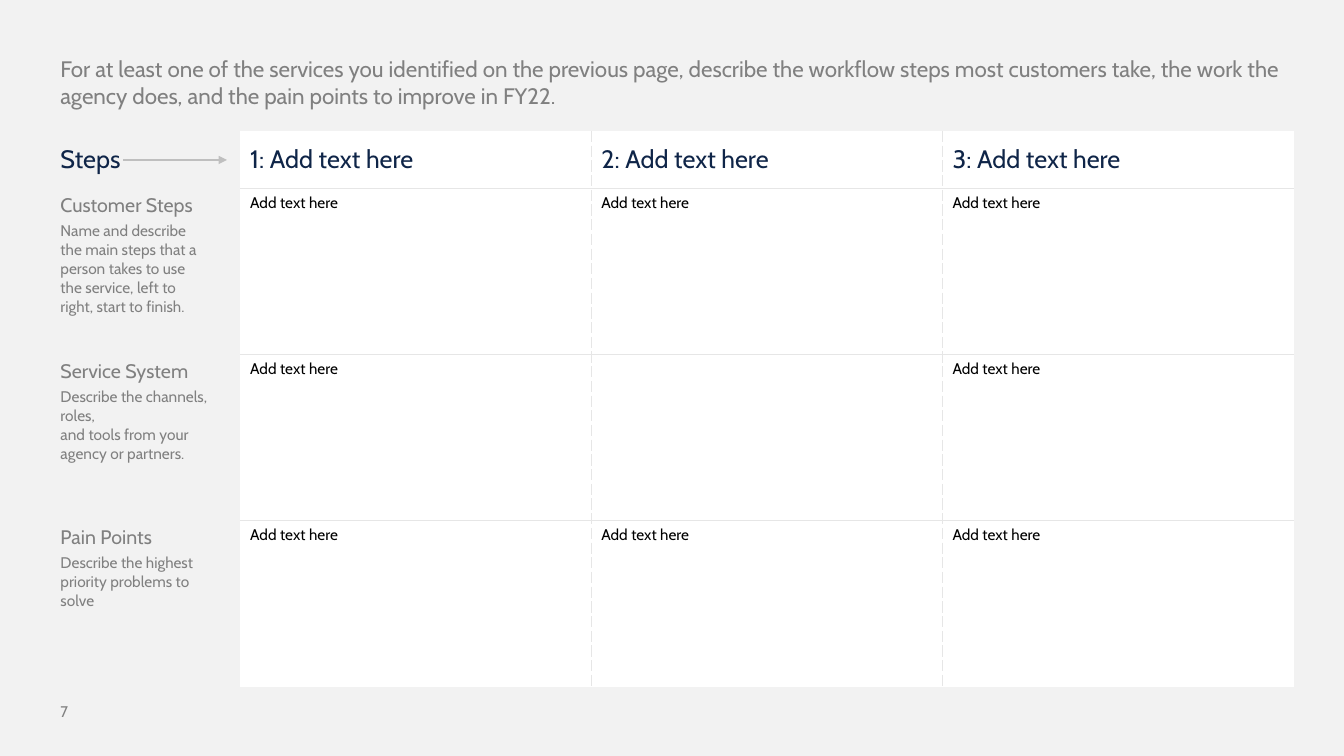
import collections

import pptx
import pptx.dml.color
import pptx.enum.shapes
import pptx.enum.text
import pptx.oxml
import pptx.oxml.ns
import pptx.util
from pptx.util import Cm

FONT = "Cabin"
PAGE, WHITE, NAVY, GREY, BLACK = "F2F2F2", "FFFFFF", "0F2548", "808080", "000000"
GRID, ARROW = "E6E6E6", "BFBFBF"

Box = collections.namedtuple("Box", "left top width height")

INTRODUCTION = (
    "For at least one of the services you identified on the previous page, "
    "describe the workflow steps most customers take, the work the agency does, "
    "and the pain points to improve in FY22."
)
PROMPT = "Add text here"
HEADER = ["Steps"] + [f"{number}: {PROMPT}" for number in (1, 2, 3)]
ROWS = [
    ("Customer Steps",
     "Name and describe the main steps that a person takes to use the service, "
     "left to right, start to finish.",
     [PROMPT, PROMPT, PROMPT]),
    ("Service System",
     "Describe the channels, roles,\vand tools from your agency or partners.",
     [PROMPT, "", PROMPT]),
    ("Pain Points",
     "Describe the highest priority problems to solve",
     [PROMPT, PROMPT, PROMPT]),
]
LABEL_WIDTH, HEADER_HEIGHT = Cm(4.78), Cm(1.46)


def color(hex_string):
    return pptx.dml.color.RGBColor.from_string(hex_string)


def write(paragraph, text, size=11, fill=GREY, space_after=0):
    paragraph.text = text
    paragraph.space_after = pptx.util.Pt(space_after)
    paragraph.font.size = pptx.util.Pt(size)
    for run in paragraph.runs:
        run.font.name = FONT
        run.font.size = pptx.util.Pt(size)
        run.font.color.rgb = color(fill)


def add_text(slide, box, text, **text_format):
    frame = slide.shapes.add_textbox(*box).text_frame
    frame.word_wrap = True
    write(frame.paragraphs[0], text, **text_format)


def set_borders(cell, dashes):
    """Draw the sides named in dashes (L, R, T, B) and clear the others."""
    properties = cell._tc.get_or_add_tcPr()
    namespace = pptx.oxml.ns.nsdecls("a")
    for side in "LRTB":
        if side in dashes:
            content = (f'<a:solidFill><a:srgbClr val="{GRID}"/></a:solidFill>'
                       f'<a:prstDash val="{dashes[side]}"/>')
        else:
            content = "<a:noFill/>"
        properties.append(pptx.oxml.parse_xml(
            f'<a:ln{side} {namespace} w="12700">{content}</a:ln{side}>'))


def style_cell(cell, row, column, last_row, last_column):
    dashes = {}
    if column > 0:
        if column > 1:
            dashes["L"] = "sysDash"
        if column < last_column:
            dashes["R"] = "sysDash"
        if row > 0:
            dashes["T"] = "solid"
        if row < last_row:
            dashes["B"] = "solid"
    set_borders(cell, dashes)
    if column == 0:
        cell.fill.background()
    else:
        cell.fill.solid()
        cell.fill.fore_color.rgb = color(WHITE)


def add_workflow_table(slide, box):
    row_count, column_count = len(ROWS) + 1, len(HEADER)
    table = slide.shapes.add_table(row_count, column_count, *box).table
    table.first_row = table.horz_banding = False

    table.columns[0].width = LABEL_WIDTH
    table.rows[0].height = HEADER_HEIGHT
    for column in range(1, column_count):
        table.columns[column].width = (box.width - LABEL_WIDTH) // (column_count - 1)
    for row in range(1, row_count):
        table.rows[row].height = (box.height - HEADER_HEIGHT) // (row_count - 1)

    for row in range(row_count):
        for column in range(column_count):
            style_cell(table.cell(row, column), row, column,
                       row_count - 1, column_count - 1)

    for column, heading in enumerate(HEADER):
        cell = table.cell(0, column)
        cell.vertical_anchor = pptx.enum.text.MSO_ANCHOR.MIDDLE
        write(cell.text_frame.paragraphs[0], heading, size=18, fill=NAVY)

    for row, (label, description, entries) in enumerate(ROWS, start=1):
        label_cell = table.cell(row, 0)
        label_cell.margin_right = Cm(0.76)
        frame = label_cell.text_frame
        write(frame.paragraphs[0], label, size=14, space_after=3)
        write(frame.add_paragraph(), description)
        for column, entry in enumerate(entries, start=1):
            paragraph = table.cell(row, column).text_frame.paragraphs[0]
            write(paragraph, entry, fill=BLACK)


def add_steps_arrow(slide, box):
    """Point from the Steps heading to the first column of the table in box."""
    middle = box.top + HEADER_HEIGHT // 2
    arrow = slide.shapes.add_connector(
        pptx.enum.shapes.MSO_CONNECTOR.STRAIGHT,
        box.left + Cm(1.83), middle, box.left + LABEL_WIDTH - Cm(0.33), middle)
    arrow.line.color.rgb = color(ARROW)
    arrow.line.width = pptx.util.Pt(1)
    namespace = pptx.oxml.ns.nsdecls("a")
    arrow.line._get_or_add_ln().append(
        pptx.oxml.parse_xml(f'<a:tailEnd {namespace} type="triangle"/>'))
    arrow._element.spPr.append(pptx.oxml.parse_xml(f"<a:effectLst {namespace}/>"))


def add_workflow_slide(presentation):
    slide = presentation.slides.add_slide(presentation.slide_layouts[6])
    slide.background.fill.solid()
    slide.background.fill.fore_color.rgb = color(PAGE)

    margin, content_width = Cm(1.27), Cm(31.33)
    table_box = Box(margin, Cm(3.3), content_width, Cm(14))
    add_text(slide, Box(margin, Cm(17.58), Cm(2.11), Cm(1.02)), "7")
    add_workflow_table(slide, table_box)
    add_steps_arrow(slide, table_box)
    add_text(slide, Box(margin, margin, content_width, Cm(1.63)), INTRODUCTION, size=16)


def main():
    presentation = pptx.Presentation()
    presentation.slide_width = Cm(33.87)
    presentation.slide_height = Cm(19.05)
    add_workflow_slide(presentation)
    presentation.save("out.pptx")


if __name__ == "__main__":
    main()
